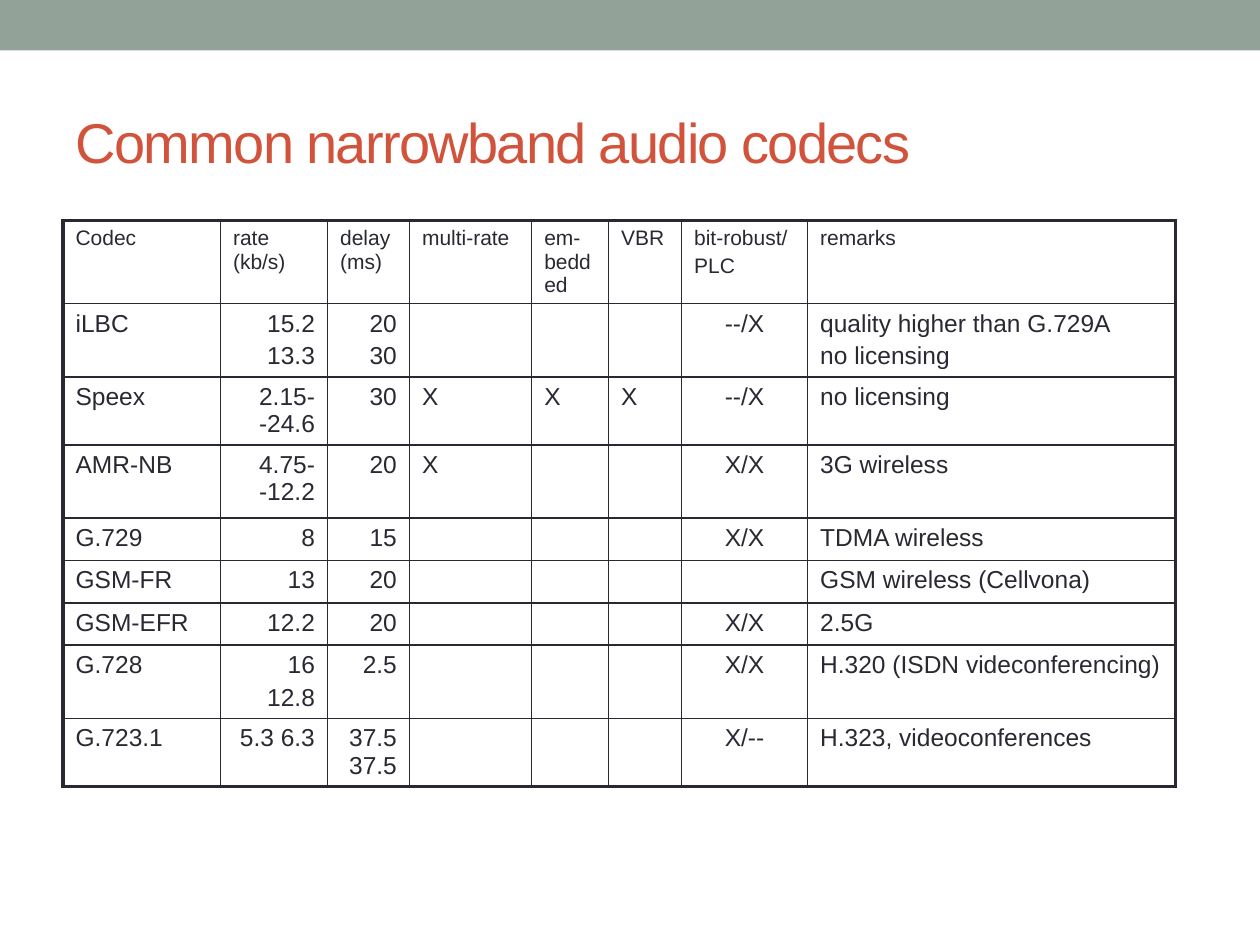
"""Build a slide with a table comparing common narrowband audio codecs."""
from typing import NamedTuple

from lxml.etree import SubElement
from pptx import Presentation
from pptx.dml.color import RGBColor
from pptx.enum.shapes import MSO_SHAPE as Shape
from pptx.enum.text import MSO_ANCHOR as Anchor, PP_ALIGN as Align
from pptx.oxml.ns import qn
from pptx.util import Inches, Pt

SAGE = RGBColor(0x93, 0xA2, 0x99)
RUST = RGBColor(0xD2, 0x53, 0x3C)
INK = RGBColor(0x29, 0x29, 0x34)
FONT = "Arial"
THIN, THICK = Pt(1), Pt(2.25)
HEADER_SIZE, BODY_SIZE = 12, 14


class Column(NamedTuple):
    heading: str
    width: float
    align: Align = Align.LEFT


class Codec(NamedTuple):
    height: float
    name: str
    rate: str
    delay: str
    multi_rate: str = ""
    embedded: str = ""
    vbr: str = ""
    robust: str = ""
    remarks: str = ""


COLUMNS = [
    Column("Codec", 1.25),
    Column("rate (kb/s)", 0.85, Align.RIGHT),
    Column("delay (ms)", 0.65, Align.RIGHT),
    Column("multi-rate", 0.97),
    Column("em-bedded", 0.61),
    Column("VBR", 0.58),
    Column("bit-robust/\nPLC", 1, Align.CENTER),
    Column("remarks", 2.92),
]
HEADER_HEIGHT = 0.66
CODECS = [
    Codec(0.58, "iLBC", "15.2\n13.3", "20\n30", robust="--/X",
          remarks="quality higher than G.729A\nno licensing"),
    Codec(0.54, "Speex", "2.15--24.6", "30", "X", "X", "X", "--/X", "no licensing"),
    Codec(0.58, "AMR-NB", "4.75--12.2", "20", "X", robust="X/X", remarks="3G wireless"),
    Codec(0.32, "G.729", "8", "15", robust="X/X", remarks="TDMA wireless"),
    Codec(0.32, "GSM-FR", "13", "20", remarks="GSM wireless (Cellvona)"),
    Codec(0.32, "GSM-EFR", "12.2", "20", robust="X/X", remarks="2.5G"),
    Codec(0.58, "G.728", "16\n12.8", "2.5", robust="X/X",
          remarks="H.320 (ISDN videconferencing)"),
    Codec(0.54, "G.723.1", "5.3 6.3", "37.5 37.5", robust="X/--",
          remarks="H.323, videoconferences"),
]


def apply_format(target, values: dict) -> None:
    for name, value in values.items():
        setattr(target, name, value)


def format_run(run, size: float, color: RGBColor) -> None:
    apply_format(run.font, {"name": FONT, "size": Pt(size)})
    run.font.color.rgb = color


def add_bar(slide) -> None:
    bar = slide.shapes.add_shape(Shape.RECTANGLE, 0, 0, Inches(10), Inches(0.4))
    bar.shadow.inherit = False
    bar.fill.solid()
    bar.fill.fore_color.rgb = SAGE
    bar.line.fill.background()


def fill_title(title, text: str) -> None:
    apply_format(title, {"left": Inches(0.5), "top": Inches(0.58),
                         "width": Inches(9), "height": Inches(1.08)})
    title.text_frame.vertical_anchor = Anchor.MIDDLE
    paragraph = title.text_frame.paragraphs[0]
    paragraph.alignment = Align.LEFT
    run = paragraph.add_run()
    run.text = text
    format_run(run, 32, RUST)
    run.font._element.set("spc", "-100")


def set_borders(cell, widths: dict[str, int]) -> None:
    properties = cell._tc.get_or_add_tcPr()
    for side, width in widths.items():
        line = SubElement(properties, qn(f"a:ln{side}"), w=str(int(width)))
        fill = SubElement(line, qn("a:solidFill"))
        SubElement(fill, qn("a:srgbClr"), val=str(INK))


def write_cell(cell, text: str, size: float, align: Align) -> None:
    cell.text = text
    for index, paragraph in enumerate(cell.text_frame.paragraphs):
        paragraph.alignment = align
        if index:
            paragraph.space_before = Pt(0.2 * size)
        for run in paragraph.runs:
            format_run(run, size, INK)
        if not paragraph.runs:
            SubElement(paragraph._p, qn("a:endParaRPr"), sz=str(size * 100))


def add_codec_table(slide) -> None:
    heights = [HEADER_HEIGHT, *(codec.height for codec in CODECS)]
    texts = [[column.heading for column in COLUMNS], *(codec[1:] for codec in CODECS)]
    last_row, last_column = len(heights) - 1, len(COLUMNS) - 1
    table = slide.shapes.add_table(
        len(heights), len(COLUMNS), Inches(0.5), Inches(1.75),
        Inches(sum(column.width for column in COLUMNS)), Inches(sum(heights))).table
    apply_format(table, {"first_row": False, "horz_banding": False})
    for table_column, column in zip(table.columns, COLUMNS):
        table_column.width = Inches(column.width)
    for row, (height, row_texts) in enumerate(zip(heights, texts)):
        table.rows[row].height = Inches(height)
        for index, (column, text) in enumerate(zip(COLUMNS, row_texts)):
            cell = table.cell(row, index)
            size, align = (BODY_SIZE, column.align) if row else (HEADER_SIZE, Align.LEFT)
            write_cell(cell, text, size, align)
            set_borders(cell, {
                "L": THIN if index else THICK,
                "R": THICK if index == last_column else THIN,
                "T": THIN if row else THICK,
                "B": THICK if row == last_row else THIN,
            })
            cell.fill.background()


def main() -> None:
    presentation = Presentation()
    apply_format(presentation, {"slide_width": Inches(10), "slide_height": Inches(7.5)})
    slide = presentation.slides.add_slide(presentation.slide_layouts[5])
    add_bar(slide)
    fill_title(slide.shapes.title, "Common narrowband audio codecs")
    add_codec_table(slide)
    presentation.save("out.pptx")


if __name__ == "__main__":
    main()
